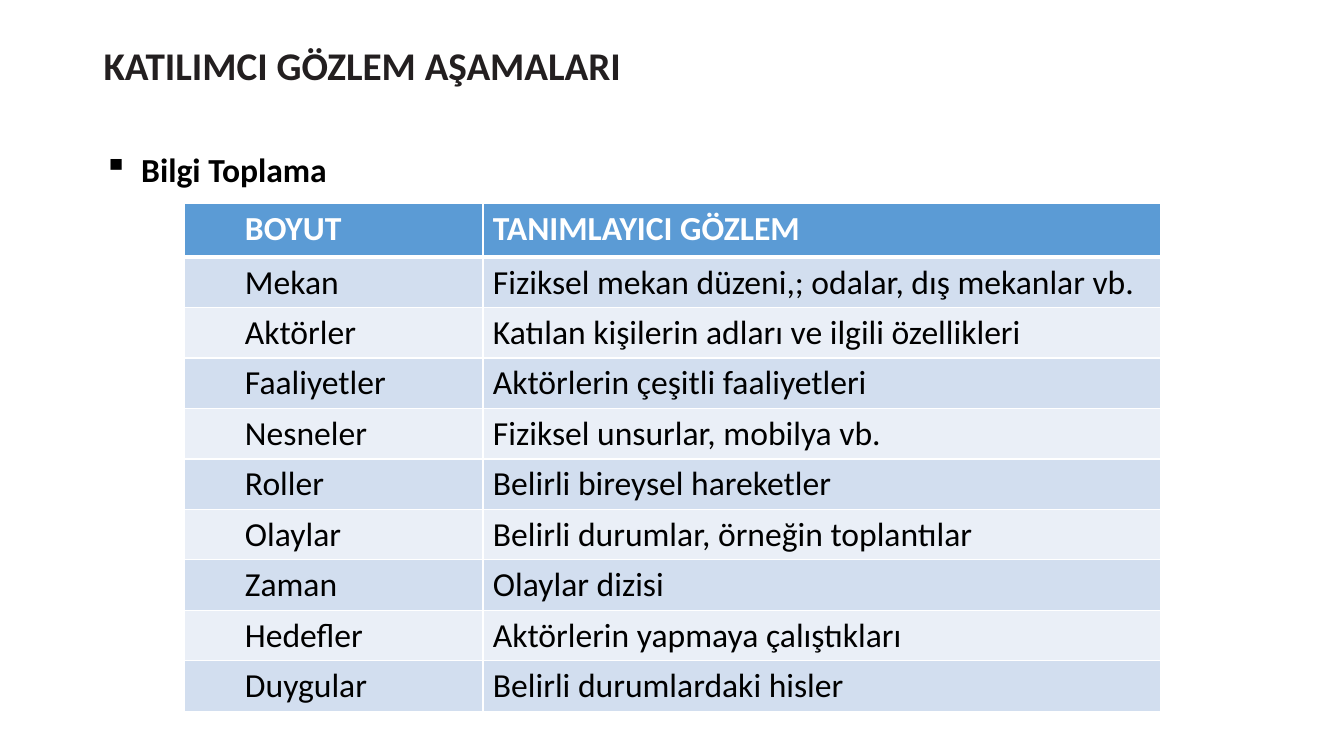
from lxml.etree import SubElement
from pptx import Presentation
from pptx.dml.color import RGBColor
from pptx.oxml.ns import qn
from pptx.util import Cm, Pt

COLORS = {
    "title": "231F20",
    "text": "000000",
    "white": "FFFFFF",
    "header": "5B9BD5",
    "odd": "D2DEEF",
    "even": "EAEFF7",
}

OBSERVATIONS = [
    ("BOYUT", "TANIMLAYICI GÖZLEM"),
    ("Mekan", "Fiziksel mekan düzeni,; odalar, dış mekanlar vb."),
    ("Aktörler", "Katılan kişilerin adları ve ilgili özellikleri"),
    ("Faaliyetler", "Aktörlerin çeşitli faaliyetleri"),
    ("Nesneler", "Fiziksel unsurlar, mobilya vb."),
    ("Roller", "Belirli bireysel hareketler"),
    ("Olaylar", "Belirli durumlar, örneğin toplantılar"),
    ("Zaman", "Olaylar dizisi"),
    ("Hedefler", "Aktörlerin yapmaya çalıştıkları"),
    ("Duygular", "Belirli durumlardaki hisler"),
]


class SlideBuilder:
    font = "Calibri"
    body_size = 24

    def __init__(self, slide):
        self.slide = slide

    def add_run(self, paragraph, text, color, size=body_size, bold=False):
        run = paragraph.add_run()
        run.text = text
        run.font.name = self.font
        run.font.size = Pt(size)
        run.font.bold = bold
        run.font.color.rgb = RGBColor.from_string(COLORS[color])

    def indent(self, paragraph, left, first=0):
        properties = paragraph._p.get_or_add_pPr()
        properties.set("marL", str(Cm(left)))
        properties.set("indent", str(Cm(first)))
        return properties

    def add_heading(self, title, stage, left, top, width, height):
        box = self.slide.shapes.add_textbox(Cm(left), Cm(top), Cm(width), Cm(height))
        frame = box.text_frame
        frame.word_wrap = True
        self.add_run(frame.paragraphs[0], title, "title", 28, True)
        bullet = frame.add_paragraph()
        bullet.line_spacing = 1.5
        bullet.space_before = Pt(29)
        properties = self.indent(bullet, 0.95, -0.95)
        SubElement(properties, qn("a:buChar"), char="▪")
        self.add_run(bullet, stage, "text", bold=True)

    def add_borders(self, cell, bottom):
        properties = cell._tc.get_or_add_tcPr()
        for side, width in (("L", 1), ("R", 1), ("T", 1), ("B", bottom)):
            line = SubElement(properties, qn(f"a:ln{side}"), w=str(Pt(width)))
            fill = SubElement(line, qn("a:solidFill"))
            SubElement(fill, qn("a:srgbClr"), val=COLORS["white"])

    def fill_cell(self, cell, text, fill, is_header, is_dimension):
        self.add_borders(cell, 3 if is_header else 1)
        cell.fill.solid()
        cell.fill.fore_color.rgb = RGBColor.from_string(COLORS[fill])
        paragraph = cell.text_frame.paragraphs[0]
        if is_dimension:
            paragraph.level = 1
            self.indent(paragraph, 1.27)
        self.add_run(paragraph, text, "white" if is_header else "text", bold=is_header)

    def add_table(self, rows, left, top, widths, header_height, row_height):
        heights = [header_height] + [row_height] * (len(rows) - 1)
        table = self.slide.shapes.add_table(
            len(rows), len(widths), Cm(left), Cm(top), Cm(sum(widths)), Cm(sum(heights))
        ).table
        for column, width in zip(table.columns, widths):
            column.width = Cm(width)
        for r, (texts, height) in enumerate(zip(rows, heights)):
            table.rows[r].height = Cm(height)
            fill = "header" if r == 0 else ("even", "odd")[r % 2]
            for c, text in enumerate(texts):
                self.fill_cell(table.cell(r, c), text, fill, r == 0, c == 0)


def main():
    presentation = Presentation()
    presentation.slide_width = Cm(33.87)
    presentation.slide_height = Cm(19.05)
    builder = SlideBuilder(presentation.slides.add_slide(presentation.slide_layouts[6]))
    builder.add_heading("KATILIMCI GÖZLEM AŞAMALARI", "Bilgi Toplama", 2.36, 0.91, 30.43, 5.44)
    builder.add_table(OBSERVATIONS, 4.65, 5.13, (7.52, 17.07), 1.35, 1.27)
    presentation.save("out.pptx")


if __name__ == "__main__":
    main()
